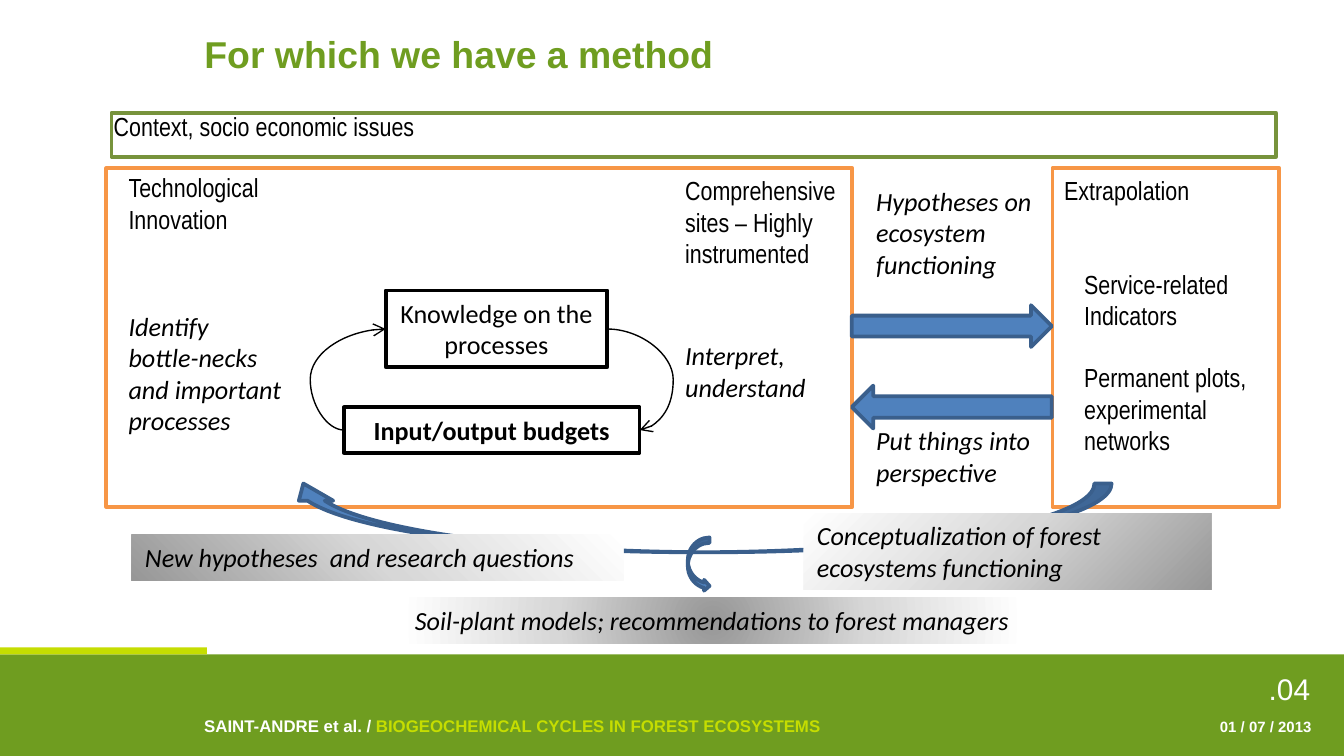
from dataclasses import dataclass

from lxml import etree
from pptx import Presentation
from pptx.dml.color import RGBColor
from pptx.enum.shapes import MSO_CONNECTOR, MSO_SHAPE
from pptx.enum.text import MSO_ANCHOR, PP_ALIGN
from pptx.oxml.ns import qn
from pptx.util import Cm, Pt

RECT = MSO_SHAPE.RECTANGLE
RIGHT_ARROW = MSO_SHAPE.RIGHT_ARROW
LEFT_ARROW = MSO_SHAPE.LEFT_ARROW
CURVED_UP = MSO_SHAPE.CURVED_UP_ARROW
CURVED_RIGHT = MSO_SHAPE.CURVED_RIGHT_ARROW
CURVE = MSO_CONNECTOR.CURVE
LEFT, CENTER, RIGHT = PP_ALIGN.LEFT, PP_ALIGN.CENTER, PP_ALIGN.RIGHT
TOP, MIDDLE = MSO_ANCHOR.TOP, MSO_ANCHOR.MIDDLE

WHITE = RGBColor(0xFF, 0xFF, 0xFF)
BLACK = RGBColor(0, 0, 0)
GREEN = RGBColor(0x6F, 0x9D, 0x20)
LIME = RGBColor(0xC5, 0xDD, 0x01)
OLIVE = RGBColor(0x77, 0x93, 0x3C)
ORANGE = RGBColor(0xF7, 0x96, 0x46)
BLUE = RGBColor(0x4F, 0x81, 0xBD)
NAVY = RGBColor(0x3A, 0x5F, 0x8C)
GREY = RGBColor(0x97, 0x97, 0x97)
SILVER = RGBColor(0xD7, 0xD7, 0xD7)

NARROW = "Arial Narrow"
BOTTOM_RIGHT = (100, 100, 0, 0)
BOTTOM_LEFT = (0, 100, 100, 0)
MIDPOINT = (50, 50, 50, 50)


@dataclass
class Block:
    x: float
    y: float
    w: float
    h: float
    fill: RGBColor | None = None
    line: RGBColor | None = None
    kind: int = RECT
    glow: tuple[int, int, int, int] | None = None
    flipped: bool = False


@dataclass
class Label:
    x: float
    y: float
    w: float
    h: float
    runs: list[tuple[str, RGBColor]]
    size: float = 14
    font: str = "Calibri"
    bold: bool = False
    italic: bool = False
    align: int = LEFT
    wrap: bool = True


@dataclass
class Loop:
    start: tuple[float, float]
    end: tuple[float, float]
    bend: int


def narrow(x: float, y: float, w: float, h: float, text: str, wrap: bool = True) -> Label:
    return Label(x, y, w, h, [(text, BLACK)], font=NARROW, wrap=wrap)


def remark(x: float, y: float, w: float, h: float, text: str) -> Label:
    return Label(x, y, w, h, [(text, BLACK)], italic=True)


def boxed(x: float, y: float, w: float, h: float, text: str, bold: bool = False) -> Label:
    return Label(x, y, w, h, [(text, BLACK)], bold=bold, align=CENTER)


def footer(x: float, y: float, w: float, h: float, runs: list[tuple[str, RGBColor]],
           size: float, bold: bool = True, align: int = RIGHT) -> Label:
    return Label(x, y, w, h, runs, size, "Arial", bold, align=align)


def set_radial_fill(properties, focus: tuple[int, int, int, int]) -> None:
    gradient = etree.Element(qn("a:gradFill"), rotWithShape="1")
    stops = etree.SubElement(gradient, qn("a:gsLst"))
    for position, color in ((0, GREY), (50, SILVER), (100, WHITE)):
        stop = etree.SubElement(stops, qn("a:gs"), pos=str(position * 1000))
        etree.SubElement(stop, qn("a:srgbClr"), val=str(color))
    radial = etree.SubElement(gradient, qn("a:path"), path="circle")
    sides = {side: str(share * 1000) for side, share in zip("ltrb", focus)}
    etree.SubElement(radial, qn("a:fillToRect"), **sides)
    properties.find(qn("a:prstGeom")).addnext(gradient)


def draw_block(shapes, block: Block) -> None:
    shape = shapes.add_shape(block.kind, Cm(block.x), Cm(block.y), Cm(block.w), Cm(block.h))
    shape.shadow.inherit = False
    if block.glow:
        set_radial_fill(shape._element.spPr, block.glow)
    elif block.fill is not None:
        shape.fill.solid()
        shape.fill.fore_color.rgb = block.fill
    else:
        shape.fill.background()
    if block.line is not None:
        shape.line.color.rgb = block.line
        shape.line.width = Pt(2)
    else:
        shape.line.fill.background()
    if block.flipped:
        shape._element.spPr.find(qn("a:xfrm")).set("flipH", "1")


def draw_label(shapes, label: Label) -> None:
    box = shapes.add_textbox(Cm(label.x), Cm(label.y), Cm(label.w), Cm(label.h))
    frame = box.text_frame
    frame.word_wrap = label.wrap
    frame.vertical_anchor = TOP
    if len(label.runs) == 1:
        frame.text = label.runs[0][0]
    else:
        for text, _ in label.runs:
            frame.paragraphs[0].add_run().text = text
    for paragraph in frame.paragraphs:
        paragraph.alignment = label.align
        font = paragraph.font
        font.name, font.size = label.font, Pt(label.size)
        font.bold, font.italic = label.bold, label.italic
        font.color.rgb = label.runs[0][1]
    for run, (_, color) in zip(frame.paragraphs[0].runs, label.runs):
        run.font.color.rgb = color


def draw_loop(shapes, loop: Loop) -> None:
    connector = shapes.add_connector(CURVE, *map(Cm, loop.start + loop.end))
    connector.line.color.rgb = BLACK
    connector.line.width = Pt(0.75)
    properties = connector._element.spPr
    etree.SubElement(properties.find(qn("a:ln")), qn("a:tailEnd"), type="arrow")
    etree.SubElement(properties, qn("a:effectLst"))
    guides = properties.find(qn("a:prstGeom")).find(qn("a:avLst"))
    etree.SubElement(guides, qn("a:gd"), name="adj1", fmla=f"val {loop.bend}")


def draw_title(title) -> None:
    title.left, title.top, title.width, title.height = Cm(3.61), Cm(0.46), Cm(21.08), Cm(1.12)
    title.text_frame.text = "For which we have a method"
    title.text_frame.vertical_anchor = MIDDLE
    heading = title.text_frame.paragraphs[0]
    heading.alignment = LEFT
    heading.font.name, heading.font.size, heading.font.bold = "Arial", Pt(20), True
    heading.font.color.rgb = GREEN


BLOCKS = [
    Block(0, 12.37, 25.4, 1.92, GREEN),
    Block(0, 12.24, 3.91, 0.13, LIME),
    Block(6.5, 7.7, 5.59, 0.86, WHITE, BLACK),
    Block(7.29, 5.49, 4.19, 1.45, WHITE, BLACK),
    Block(2.01, 3.18, 14.1, 6.4, line=ORANGE),
    Block(19.89, 3.18, 4.29, 6.4, line=ORANGE),
    Block(16.1, 5.77, 3.78, 0.79, BLUE, NAVY, RIGHT_ARROW),
    Block(16.1, 7.29, 3.78, 0.81, BLUE, NAVY, LEFT_ARROW),
    Block(5.41, 9.14, 15.6, 1.3, BLUE, NAVY, CURVED_UP, flipped=True),
    Block(15.19, 9.7, 7.7, 1.45, glow=BOTTOM_RIGHT),
    Block(2.49, 10.11, 9.3, 0.86, glow=BOTTOM_LEFT),
    Block(13, 10.16, 0.41, 1.02, BLUE, NAVY, CURVED_RIGHT),
    Block(7.59, 11.3, 11.76, 0.86, glow=MIDPOINT),
    Block(2.11, 2.13, 22, 0.84, WHITE, OLIVE),
]
LOOPS = [
    Loop((11.48, 6.22), (12.09, 8.13), 204000),
    Loop((6.5, 8.13), (7.29, 6.22), -80600),
]
LABELS = [
    boxed(6.5, 7.7, 5.59, 0.86, "Input/output budgets", bold=True),
    boxed(7.29, 5.49, 4.19, 1.45, "Knowledge on the processes"),
    remark(12.7, 6.3, 3.61, 1.45, "Interpret, understand"),
    narrow(2.18, 3.12, 2.97, 1.45, "Technological\nInnovation", wrap=False),
    narrow(12.7, 3.18, 3.4, 2.06, "Comprehensive sites – Highly instrumented"),
    narrow(19.86, 3.18, 4.24, 0.86, "Extrapolation"),
    remark(16.31, 3.38, 3.81, 2.06, "Hypotheses on ecosystem functioning"),
    remark(16.31, 7.9, 3.81, 1.45, "Put things into perspective"),
    narrow(20.24, 6.71, 4.24, 2.06, "Permanent plots, experimental networks"),
    narrow(20.24, 4.95, 3.94, 1.45, "Service-related Indicators"),
    remark(15.19, 9.7, 7.7, 1.45, "Conceptualization of forest ecosystems functioning"),
    remark(2.49, 10.11, 9.3, 0.86, "New hypotheses  and research questions"),
    remark(7.59, 11.3, 11.76, 0.86, "Soil-plant models; recommendations to forest managers"),
    narrow(1.9, 1.96, 21.79, 0.86, "Context, socio economic issues"),
    remark(2.18, 5.74, 3.4, 2.64, "Identify bottle-necks and important processes"),
    footer(21.89, 12.55, 3.12, 0.69, [(".04", WHITE)], 16, bold=False),
    footer(3.61, 13.41, 13.08, 0.64, [("SAINT-ANDRE et al. / ", WHITE),
           ("BIOGEOCHEMICAL CYCLES IN FOREST ECOSYSTEMS", LIME)], 9, align=LEFT),
    footer(19.76, 13.44, 5.28, 0.61, [("01 / 07 / 2013", WHITE)], 8),
]


def main() -> None:
    deck = Presentation()
    deck.slide_width, deck.slide_height = Cm(25.4), Cm(14.29)
    slide = deck.slides.add_slide(deck.slide_layouts[5])
    draw_title(slide.shapes.title)
    for block in BLOCKS:
        draw_block(slide.shapes, block)
    for loop in LOOPS:
        draw_loop(slide.shapes, loop)
    for label in LABELS:
        draw_label(slide.shapes, label)
    deck.save("out.pptx")


if __name__ == "__main__":
    main()
